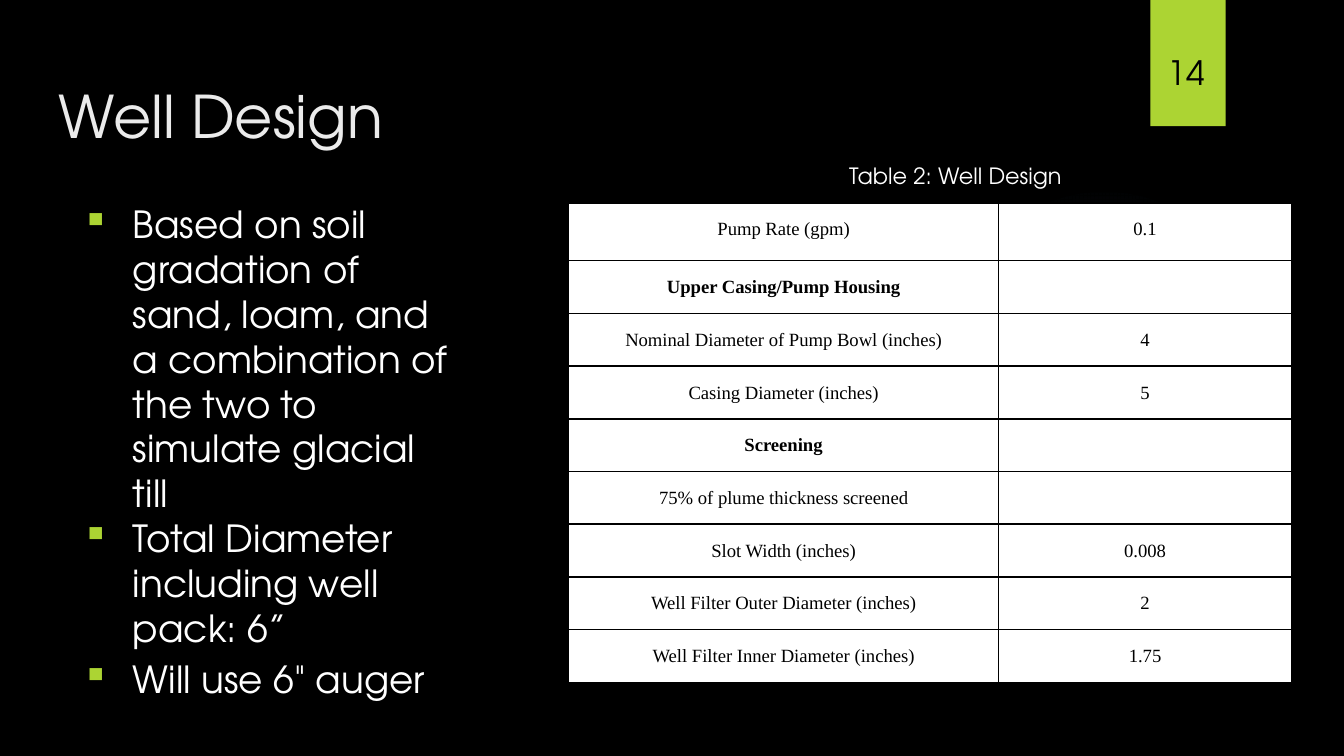
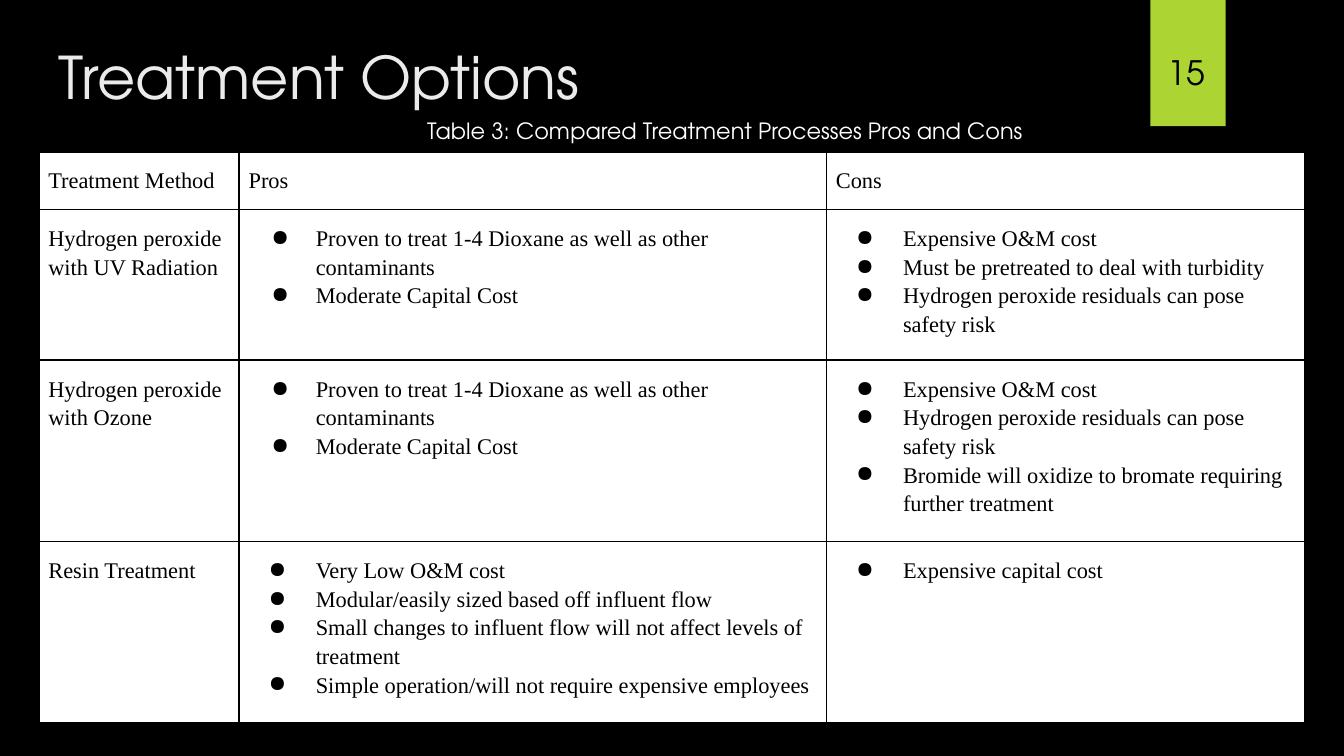
from dataclasses import dataclass
from typing import Any, Optional, Union

from lxml.etree import SubElement
from pptx import Presentation
from pptx.dml.color import RGBColor
from pptx.enum.shapes import MSO_SHAPE
from pptx.enum.text import MSO_ANCHOR, PP_ALIGN
from pptx.oxml import parse_xml
from pptx.oxml.ns import nsdecls, qn
from pptx.util import Emu, Inches, Pt

SLIDE_WIDTH = Inches(10)
SLIDE_HEIGHT = Emu(SLIDE_WIDTH * 9 // 16)
GRID_COLUMNS = 100

BLACK = RGBColor(0x00, 0x00, 0x00)
WHITE = RGBColor(0xFF, 0xFF, 0xFF)
LIME = RGBColor(0xAC, 0xD4, 0x33)
PALE = RGBColor(0xEB, 0xEB, 0xEB)
GLOW = RGBColor(0x7A, 0xC4, 0xF0)

HEADING_FONT = "TeX Gyre Adventor"
TABLE_FONT = "Times New Roman"
GLOW_STOPS = ((0, 7), (36, 6), (69, 0), (100, 0))


def grid(units: float) -> Emu:
    return Emu(round(SLIDE_WIDTH * units / GRID_COLUMNS))


@dataclass(frozen=True)
class Area:
    left: float
    top: float
    width: float
    height: float

    def lengths(self) -> tuple[Emu, ...]:
        return tuple(map(grid, (self.left, self.top, self.width, self.height)))


@dataclass(frozen=True)
class TextStyle:
    font: str
    size: float
    color: RGBColor
    alignment: PP_ALIGN = PP_ALIGN.LEFT
    line_spacing: float = 1.0


@dataclass(frozen=True)
class Bullet:
    symbol: str
    hanging: float
    color: RGBColor


@dataclass(frozen=True)
class Line:
    text: str
    bullet: Optional[Bullet] = None
    bold: bool = False
    line_spacing: Optional[float] = None


Cell = Union[str, Line, list[Line]]


@dataclass(frozen=True)
class TablePlan:
    left: float
    top: float
    columns: tuple[float, ...]
    rows: tuple[float, ...]
    cells: list[tuple[Cell, ...]]
    style: TextStyle


TITLE = TextStyle(HEADING_FONT, 31.5, PALE)
BODY = TextStyle(HEADING_FONT, 20, WHITE)
CAPTION = TextStyle(HEADING_FONT, 12, WHITE, PP_ALIGN.CENTER)
NUMBER = TextStyle(HEADING_FONT, 18, BLACK, PP_ALIGN.CENTER)
DESIGN_CELL = TextStyle(TABLE_FONT, 10, BLACK, PP_ALIGN.CENTER, 1.15)
OPTION_CELL = TextStyle(TABLE_FONT, 12, BLACK, line_spacing=1.15)

SQUARE = Bullet("▪", 3.8, LIME)
DOT = Bullet("●", 3.5, BLACK)
NEAR_DOT = Bullet("●", 3.3, BLACK)

TAB_AREA = Area(85.6, 0, 5.6, 9.4)
NUMBER_AREA = Area(85.8, 3.4, 4.9, 4)
GLOW_AREA = Area(70.6, 13.8, 23.1, 23.1)
WIDE_MARGINS = {"margin_left": grid(1), "margin_right": grid(1),
                "margin_top": grid(1), "margin_bottom": grid(1)}
CELL_MARGINS = {**WIDE_MARGINS, "margin_left": grid(0.7), "margin_right": grid(0.7)}


def apply(target: Any, values: dict[str, Any]) -> None:
    for name, value in values.items():
        setattr(target, name, value)


def bulleted(bullet: Bullet, *texts: str) -> list[Line]:
    return [Line(text, bullet) for text in texts]


def add_bullet(paragraph: Any, bullet: Bullet) -> None:
    properties = paragraph._p.get_or_add_pPr()
    apply_indent = {"marL": grid(5), "indent": -grid(bullet.hanging)}
    for name, value in apply_indent.items():
        properties.set(name, str(int(value)))
    color = SubElement(properties, qn("a:buClr"))
    SubElement(color, qn("a:srgbClr")).set("val", str(bullet.color))
    SubElement(properties, qn("a:buChar")).set("char", bullet.symbol)


def write_lines(frame: Any, lines: list[Line], style: TextStyle) -> None:
    for index, line in enumerate(lines):
        paragraph = frame.add_paragraph() if index else frame.paragraphs[0]
        if line.bullet:
            add_bullet(paragraph, line.bullet)
        apply(paragraph, {"alignment": style.alignment,
                          "line_spacing": line.line_spacing or style.line_spacing})
        if line.text:
            run = paragraph.add_run()
            run.text = line.text
            apply(run.font, {"name": style.font, "size": Pt(style.size), "bold": line.bold})
            run.font.color.rgb = style.color
        else:
            ending = SubElement(paragraph._p, qn("a:endParaRPr"))
            ending.set("sz", str(int(style.size * 100)))
            SubElement(ending, qn("a:latin")).set("typeface", style.font)


def add_text(slide: Any, area: Area, lines: list[Line], style: TextStyle,
             margins: Optional[dict[str, Emu]] = None, wrap: bool = True) -> None:
    frame = slide.shapes.add_textbox(*area.lengths()).text_frame
    apply(frame, {"word_wrap": wrap, "vertical_anchor": MSO_ANCHOR.TOP, **(margins or {})})
    write_lines(frame, lines, style)


def add_plain_shape(slide: Any, kind: MSO_SHAPE, area: Area, color: RGBColor) -> Any:
    shape = slide.shapes.add_shape(kind, *area.lengths())
    shape.shadow.inherit = False
    shape.fill.solid()
    shape.fill.fore_color.rgb = color
    shape.line.fill.background()
    return shape


def add_glow(slide: Any) -> None:
    shape = add_plain_shape(slide, MSO_SHAPE.OVAL, GLOW_AREA, GLOW)
    stops = "".join(
        f'<a:gs pos="{position * 1000}"><a:srgbClr val="{GLOW}">'
        f'<a:alpha val="{opacity * 1000}"/></a:srgbClr></a:gs>'
        for position, opacity in GLOW_STOPS)
    gradient = parse_xml(
        f'<a:gradFill {nsdecls("a")}><a:gsLst>{stops}</a:gsLst><a:path path="circle">'
        '<a:fillToRect l="50000" t="50000" r="50000" b="50000"/></a:path></a:gradFill>')
    properties = shape._element.spPr
    properties.replace(properties.find(qn("a:solidFill")), gradient)


def add_borders(cell: Any) -> None:
    properties = cell._tc.get_or_add_tcPr()
    for index, side in enumerate(("lnL", "lnR", "lnT", "lnB")):
        properties.insert(index, parse_xml(
            f'<a:{side} {nsdecls("a")} w="{Pt(1)}"><a:solidFill>'
            f'<a:srgbClr val="{BLACK}"/></a:solidFill></a:{side}>'))


def as_lines(content: Cell) -> list[Line]:
    if isinstance(content, str):
        return [Line(content)]
    return [content] if isinstance(content, Line) else content


def add_table(slide: Any, plan: TablePlan) -> None:
    area = Area(plan.left, plan.top, sum(plan.columns), sum(plan.rows))
    table = slide.shapes.add_table(
        len(plan.rows), len(plan.columns), *area.lengths()).table
    apply(table, {"first_row": False, "horz_banding": False})
    for column, width in zip(table.columns, plan.columns):
        column.width = grid(width)
    for row, height, contents in zip(table.rows, plan.rows, plan.cells):
        row.height = grid(height)
        for cell, content in zip(row.cells, contents):
            apply(cell, {"vertical_anchor": MSO_ANCHOR.TOP, **CELL_MARGINS})
            cell.fill.solid()
            cell.fill.fore_color.rgb = WHITE
            add_borders(cell)
            write_lines(cell.text_frame, as_lines(content), plan.style)


def add_base_slide(presentation: Any, title: str, title_area: Area, number: int) -> Any:
    slide = presentation.slides.add_slide(presentation.slide_layouts[6])
    slide.background.fill.solid()
    slide.background.fill.fore_color.rgb = BLACK
    add_glow(slide)
    add_plain_shape(slide, MSO_SHAPE.RECTANGLE, TAB_AREA, LIME)
    add_text(slide, title_area, [Line(title)], TITLE, WIDE_MARGINS)
    add_text(slide, NUMBER_AREA, [Line(str(number))], NUMBER)
    return slide


WELL_POINTS = bulleted(
    SQUARE,
    "Based on soil gradation of sand, loam, and a combination of the two to simulate glacial till",
    "Total Diameter including well pack: 6”",
) + [Line('Will use 6" auger', SQUARE, line_spacing=1.15)]

WELL_TABLE = TablePlan(
    42.3, 15.1, (32, 21.8), (4.3,) + (3.75,) * 8,
    [
        ("Pump Rate (gpm)", "0.1"),
        (Line("Upper Casing/Pump Housing", bold=True), ""),
        ("Nominal Diameter of Pump Bowl (inches)", "4"),
        ("Casing Diameter (inches)", "5"),
        (Line("Screening", bold=True), ""),
        ("75% of plume thickness screened", ""),
        ("Slot Width (inches)", "0.008"),
        ("Well Filter Outer Diameter (inches)", "2"),
        ("Well Filter Inner Diameter (inches)", "1.75"),
    ],
    DESIGN_CELL)

PEROXIDE_PROS = bulleted(
    NEAR_DOT,
    "Proven to treat 1-4 Dioxane as well as other contaminants",
    "Moderate Capital Cost")
OPERATING_COST = "Expensive O&M cost"
RESIDUAL_RISK = "Hydrogen peroxide residuals can pose safety risk"

TREATMENT_TABLE = TablePlan(
    2.9, 11.3, (14.9, 43.7, 35.6), (4.1, 10.5, 12.6, 12.6),
    [
        ("Treatment Method", "Pros", "Cons"),
        ("Hydrogen peroxide with UV Radiation", PEROXIDE_PROS,
         bulleted(DOT, OPERATING_COST, "Must be pretreated to deal with turbidity",
                  RESIDUAL_RISK)),
        ("Hydrogen peroxide with Ozone", PEROXIDE_PROS,
         bulleted(DOT, OPERATING_COST, RESIDUAL_RISK,
                  "Bromide will oxidize to bromate requiring further treatment")),
        ("Resin Treatment",
         bulleted(DOT, "Very Low O&M cost",
                  "Modular/easily sized based off influent flow",
                  "Small changes to influent flow will not affect levels of treatment",
                  "Simple operation/will not require expensive employees"),
         bulleted(DOT, "Expensive capital cost")),
    ],
    OPTION_CELL)


def add_well_design(presentation: Any) -> None:
    slide = add_base_slide(presentation, "Well Design", Area(3.4, 4.9, 31.4, 6.3), 14)
    add_text(slide, Area(3.9, 14, 30.9, 37.4), WELL_POINTS, BODY, WIDE_MARGINS)
    add_table(slide, WELL_TABLE)
    add_text(slide, Area(61.8, 11.6, 18.6, 3), [Line("Table 2: Well Design")],
             CAPTION, wrap=False)


def add_treatment_options(presentation: Any) -> None:
    slide = add_base_slide(presentation, "Treatment Options", Area(3.4, 2, 93.2, 6.3), 15)
    add_table(slide, TREATMENT_TABLE)
    add_text(slide, Area(29.9, 8.2, 48.1, 3),
             [Line("Table 3: Compared Treatment Processes Pros and Cons")],
             CAPTION, wrap=False)


def main() -> None:
    presentation = Presentation()
    apply(presentation, {"slide_width": SLIDE_WIDTH, "slide_height": SLIDE_HEIGHT})
    add_well_design(presentation)
    add_treatment_options(presentation)
    presentation.save("out.pptx")


if __name__ == "__main__":
    main()
